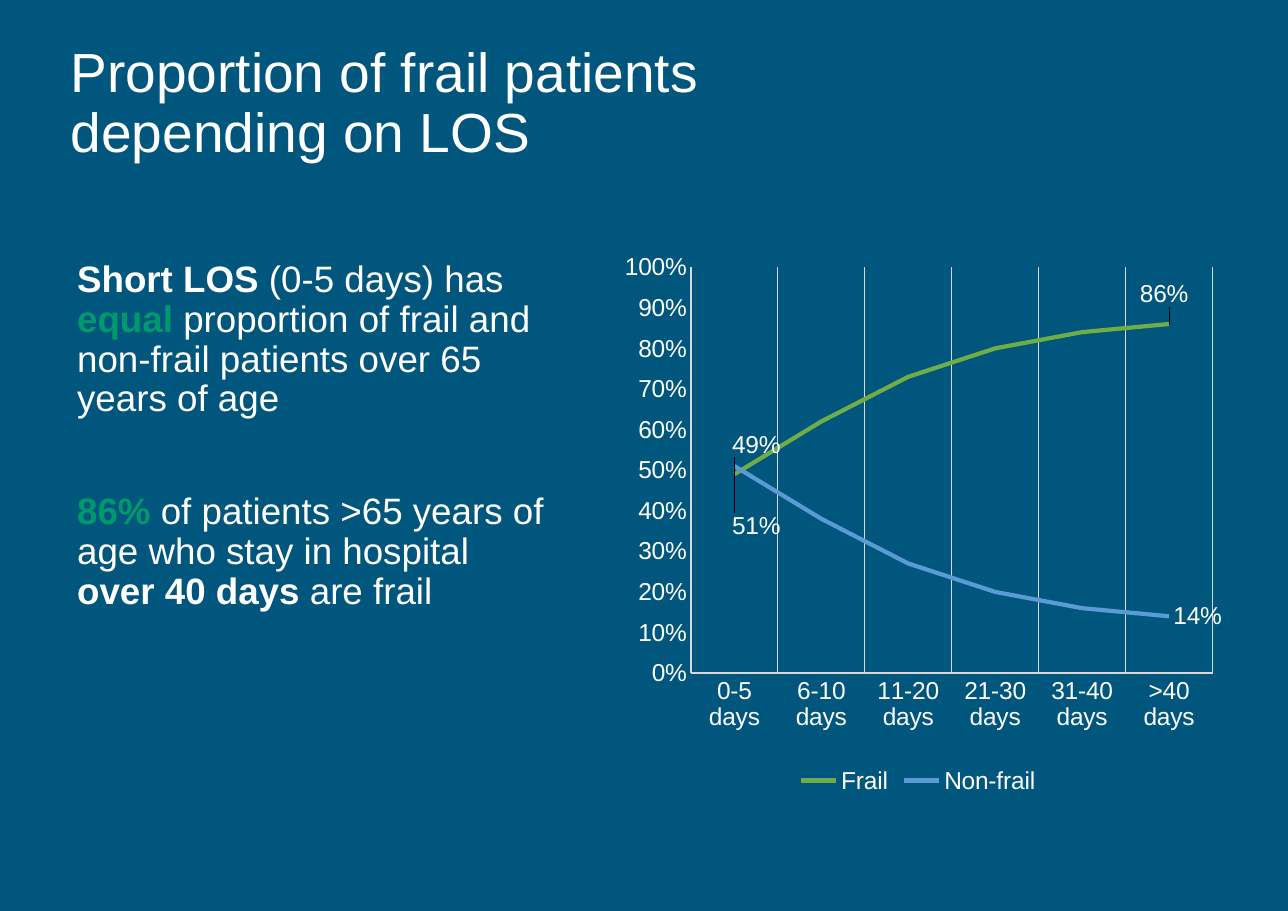
"""Build a slide on the proportion of frail patients by length of stay."""
from lxml import etree
from pptx import Presentation
from pptx.chart.data import CategoryChartData
from pptx.dml.color import RGBColor
from pptx.enum.chart import XL_CHART_TYPE, XL_LABEL_POSITION, XL_LEGEND_POSITION, XL_TICK_MARK
from pptx.enum.text import MSO_ANCHOR, MSO_AUTO_SIZE, PP_ALIGN
from pptx.oxml.ns import qn
from pptx.util import Inches, Pt

NAVY = RGBColor(0x00, 0x56, 0x7C)
WHITE = RGBColor(0xFF, 0xFF, 0xFF)
EMERALD = RGBColor(0x00, 0x99, 0x6D)
GREEN = RGBColor(0x70, 0xAD, 0x47)
BLUE = RGBColor(0x5B, 0x9B, 0xD5)
GREY = RGBColor(0xD9, 0xD9, 0xD9)
FONT = "Arial"
LINE_CHART = XL_CHART_TYPE.LINE
LABEL_RIGHT = XL_LABEL_POSITION.RIGHT
LEGEND_BOTTOM = XL_LEGEND_POSITION.BOTTOM
NO_TICKS = XL_TICK_MARK.NONE
TOP = MSO_ANCHOR.TOP
NO_AUTOFIT = MSO_AUTO_SIZE.NONE
LEFT = PP_ALIGN.LEFT


def style_font(font, size, color=WHITE, bold=False):
    font.name = FONT
    font.size = Pt(size)
    font.color.rgb = color
    font.bold = bold


def add_manual_layout(parent, index, settings):
    layout = etree.Element(qn("c:layout"))
    manual = etree.SubElement(layout, qn("c:manualLayout"))
    for name, value in settings.items():
        etree.SubElement(manual, qn(f"c:{name}")).set("val", str(value))
    parent.insert(index, layout)


presentation = Presentation()
presentation.slide_width = Inches(11.69)
presentation.slide_height = Inches(8.27)
slide = presentation.slides.add_slide(presentation.slide_layouts[1])
slide.background.fill.solid()
slide.background.fill.fore_color.rgb = NAVY

title = slide.shapes.title
title.left, title.top, title.width, title.height = map(Inches, (0.54, 0.36, 7.8, 1.06))
title.text_frame.vertical_anchor = TOP
title.text_frame.auto_size = NO_AUTOFIT
paragraph = title.text_frame.paragraphs[0]
paragraph.alignment = LEFT
paragraph.line_spacing = 0.9
run = paragraph.add_run()
run.text = "Proportion of frail patients depending on LOS"
style_font(run.font, 36)

findings = [
    [
        ("Short LOS ", WHITE, True),
        ("(0-5 days) has ", WHITE, False),
        ("equal ", EMERALD, True),
        ("proportion of frail and non-frail patients over 65 years of age", WHITE, False),
    ],
    [
        ("86% ", EMERALD, True),
        ("of patients >65 years of age who stay in hospital ", WHITE, False),
        ("over 40 days", WHITE, True),
        (" are frail", WHITE, False),
    ],
]
body = slide.placeholders[1]
body.left, body.top, body.width, body.height = map(Inches, (0.6, 2.32, 4.45, 4.44))
body.text_frame.vertical_anchor = TOP
body.text_frame.auto_size = NO_AUTOFIT
for index, finding in enumerate(findings):
    paragraph = body.text_frame.paragraphs[0] if index == 0 else body.text_frame.add_paragraph()
    properties = paragraph._p.get_or_add_pPr()
    properties.set("marL", "0")
    properties.set("indent", "0")
    etree.SubElement(properties, qn("a:buNone"))
    paragraph.line_spacing = 0.9
    paragraph.space_before = Pt(48 * index)
    for text, color, bold in finding:
        run = paragraph.add_run()
        run.text = text
        style_font(run.font, 24, color, bold)

chart_data = CategoryChartData(number_format="0%")
chart_data.categories = [f"{stay} days" for stay in ("0-5", "6-10", "11-20", "21-30", "31-40", ">40")]
chart_data.add_series("Frail", (0.49, 0.62, 0.73, 0.8, 0.84, 0.86))
chart_data.add_series("Non-frail", (0.51, 0.38, 0.27, 0.2, 0.16, 0.14))
chart = slide.shapes.add_chart(
    LINE_CHART, Inches(5.3), Inches(1.83), Inches(6.07), Inches(5.42), chart_data
).chart
style_font(chart.font, 16)
chart.has_title = False
chart.has_legend = True
chart.legend.position = LEGEND_BOTTOM
chart.legend.include_in_layout = False
style_font(chart.legend.font, 16)

for axis in (chart.category_axis, chart.value_axis):
    axis.major_tick_mark = NO_TICKS
    axis.minor_tick_mark = NO_TICKS
    style_font(axis.tick_labels.font, 16)
category_axis = chart.category_axis
category_axis.format.line.color.rgb = GREY
category_axis.format.line.width = Pt(1)
category_axis.has_major_gridlines = True
category_axis.major_gridlines.format.line.color.rgb = GREY
category_axis.major_gridlines.format.line.width = Pt(0.75)
value_axis = chart.value_axis
value_axis.has_major_gridlines = False
value_axis.format.line.fill.background()
value_axis.minimum_scale = 0
value_axis.maximum_scale = 1
value_axis.major_unit = 0.1
value_axis.tick_labels.number_format = "0%"
value_axis.tick_labels.number_format_is_linked = False

plot = chart.plots[0]
plot.vary_by_categories = False
plot_area = chart._chartSpace.chart.plotArea
for layout in plot_area.findall(qn("c:layout")):
    plot_area.remove(layout)
add_manual_layout(plot_area, 0, {
    "layoutTarget": "inner", "xMode": "edge", "yMode": "edge",
    "x": 0.16, "y": 0.11, "w": 0.78, "h": 0.68,
})

series_styles = [
    (GREEN, {0: (-0.01, -0.05), 5: (-0.05, -0.05)}),
    (BLUE, {0: (-0.01, 0.1), 5: (0, 0)}),
]
for series, (color, label_offsets) in zip(plot.series, series_styles):
    series.smooth = False
    series.format.line.color.rgb = color
    series.format.line.width = Pt(2.75)
    labels = series.data_labels
    labels.show_value = False
    for leader_lines in labels._element.findall(qn("c:showLeaderLines")):
        labels._element.remove(leader_lines)
    for point_index in label_offsets:
        label = series.points[point_index].data_label
        style_font(label.font, 16)
        label.position = LABEL_RIGHT
    for element, (x, y) in zip(labels._element.findall(qn("c:dLbl")), label_offsets.values()):
        if x or y:
            add_manual_layout(element, 1, {"x": x, "y": y})

presentation.save("out.pptx")
